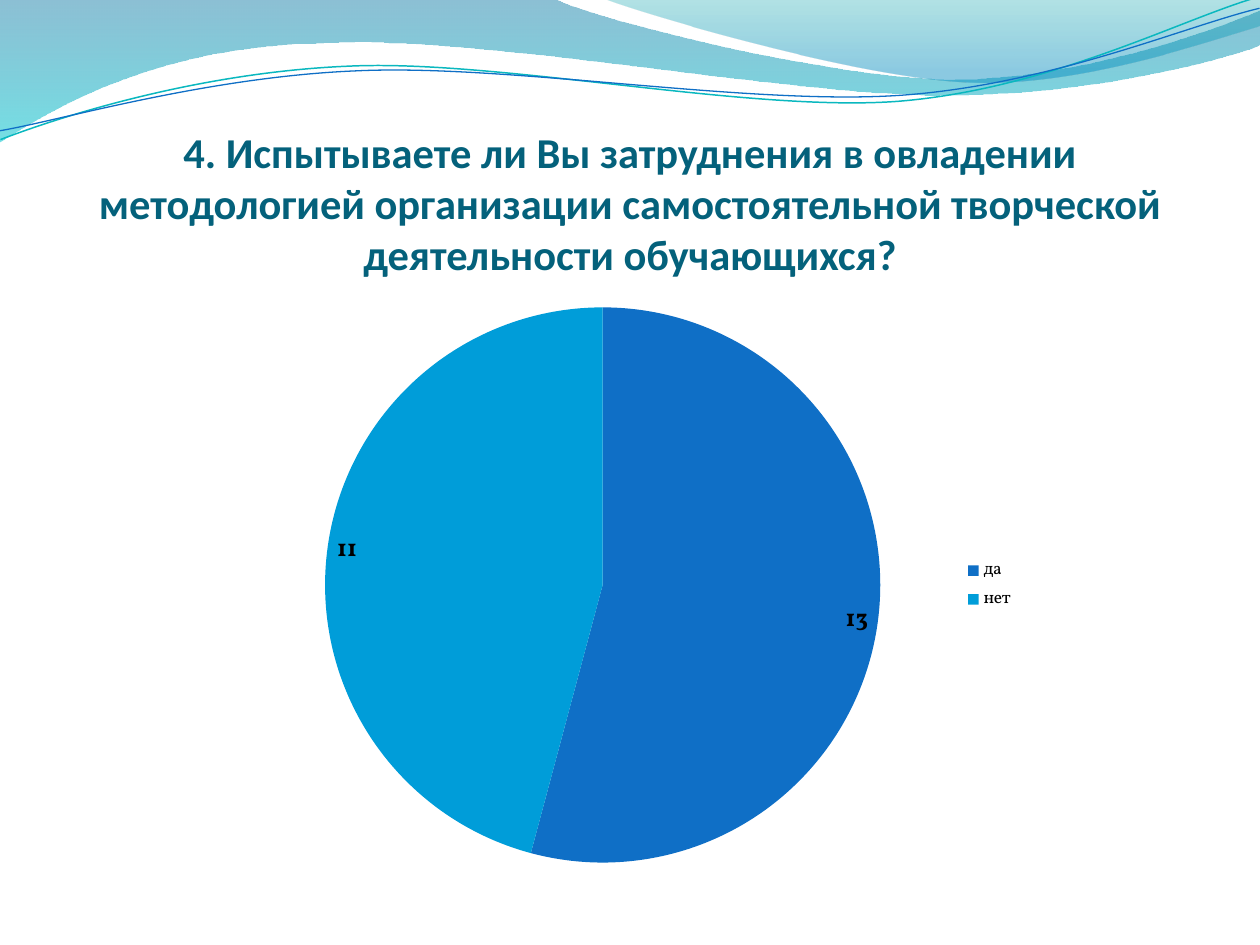
from lxml import etree
from pptx import Presentation
from pptx import util as u
from pptx.chart import data
from pptx.dml import color
from pptx.enum import chart as ch, text
from pptx.oxml import ns

PX = 914400 / 126


def rgb(value):
    return color.RGBColor.from_string(value)


def write(tf, txt, font="Calibri", size=24, bold=False, fill="000000", bottom=0,
          align=text.PP_ALIGN.CENTER, anchor=text.MSO_ANCHOR.BOTTOM):
    tf.word_wrap = True
    tf.auto_size = text.MSO_AUTO_SIZE.NONE
    tf.vertical_anchor = anchor
    tf.margin_left = tf.margin_top = tf.margin_right = 0
    tf.margin_bottom = round(bottom * PX)
    p = tf.paragraphs[0]
    p.alignment = align
    p.line_spacing = 1.0
    p.space_before = u.Pt(0)
    r = p.add_run()
    r.text = txt
    r.font.name = font
    r.font.size = u.Pt(size)
    r.font.bold = bold
    r.font.color.rgb = rgb(fill)


prs = Presentation()
prs.slide_width, prs.slide_height = round(1260 * PX), round(945 * PX)
layout = prs.slide_layouts[5]
s = prs.slides.add_slide(layout)

waves = [
    {"start": (0, 0),
     "parts": [(554, -1), (600, 21, 837, 79, 955, 79), (1075, 79, 1207, 33, 1260, 11),
               (1261, 45), (1239, 55, 1096, 96, 940, 95), (783, 95, 481, 35, 324, 43),
               (163, 45, 58, 105, -1, 142), (0, 0)],
     "stops": [(0, "0074A1", 45), (1, "00C6CF", 55)]},
    {"start": (604, -1),
     "parts": [(641, 14, 859, 78, 969, 82), (1079, 87, 1211, 40, 1260, 26),
               (1260, 0), (604, -1)],
     "stops": [(0, "00A1A9", 30), (0.8, "008BBF", 45)]},
    {"start": (-2, 110),
     "parts": [(58, 90, 199, 52, 350, 53), (499, 53, 745, 118, 896, 114),
               (1049, 109, 1184, 45, 1260, 27)],
     "line": ("0AB8BF", 0.85)},
    {"start": (-2, 101),
     "parts": [(57, 94, 207, 57, 357, 58), (509, 58, 750, 112, 902, 108),
               (1052, 104, 1188, 52, 1262, 38)],
     "line": ("0F6FC6", 0.75)},
]
for wave in waves:
    points = [part[i:i + 2] for part in wave["parts"] for i in range(0, len(part), 2)]
    builder = s.shapes.build_freeform(*wave["start"], scale=PX)
    builder.add_line_segments(points, close="stops" in wave)
    sp = builder.convert_to_shape()
    segments = iter(list(sp._element.iter(ns.qn("a:lnTo"))))
    for part in wave["parts"]:
        first = next(segments)
        if len(part) == 6:
            curve = etree.Element(ns.qn("a:cubicBezTo"))
            first.addprevious(curve)
            for segment in (first, next(segments), next(segments)):
                curve.append(segment[0])
                segment.getparent().remove(segment)
    sp.shadow.inherit = False
    if "stops" in wave:
        sp.line.fill.background()
        sp.fill.gradient()
        sp.fill.gradient_angle = 270
        for stop, (position, value, opacity) in zip(sp.fill.gradient_stops, wave["stops"]):
            stop.position = position
            stop.color.rgb = rgb(value)
        for node, (_, _, opacity) in zip(sp._element.spPr.iter(ns.qn("a:srgbClr")), wave["stops"]):
            etree.SubElement(node, ns.qn("a:alpha"), val=str(opacity * 1000))
    else:
        sp.fill.background()
        value, width = wave["line"]
        sp.line.color.rgb = rgb(value)
        sp.line.width = u.Pt(width)
        sp.rotation = 357.3
    layout.shapes.element.append(sp._element)

title = s.shapes.title
title.left, title.top, title.width, title.height = [round(v * PX) for v in (63, 195, 1134, 179)]
write(title.text_frame,
      "4. Испытываете ли Вы затруднения в овладении методологией организации "
      "самостоятельной творческой деятельности обучающихся?",
      size=24.3, bold=True, fill="04617B", bottom=95)

answers = data.CategoryChartData()
answers.categories = ["да", "нет"]
answers.add_series("Series 1", (13, 11))
box = [round(v * PX) for v in (243, 290, 784, 590)]
chart = s.shapes.add_chart(ch.XL_CHART_TYPE.PIE, *box, answers).chart
chart.has_title = False
chart.font.name = "Vollkorn"
chart.font.size = u.Pt(10)
chart.font.color.rgb = rgb("000000")
chart.has_legend = True
chart.legend.position = ch.XL_LEGEND_POSITION.RIGHT
chart.legend.include_in_layout = False

plot = chart.plots[0]
plot.vary_by_categories = True
for i, value in enumerate(("0F6FC6", "009DD9")):
    fill = plot.series[0].points[i].format.fill
    fill.solid()
    fill.fore_color.rgb = rgb(value)
labels = plot.series[0].data_labels
labels.show_value = True
labels.position = ch.XL_LABEL_POSITION.BEST_FIT
labels.font.name = "Vollkorn"
labels.font.size = u.Pt(14)
labels.font.bold = True
labels.font.color.rgb = rgb("000000")

prs.save("out.pptx")
